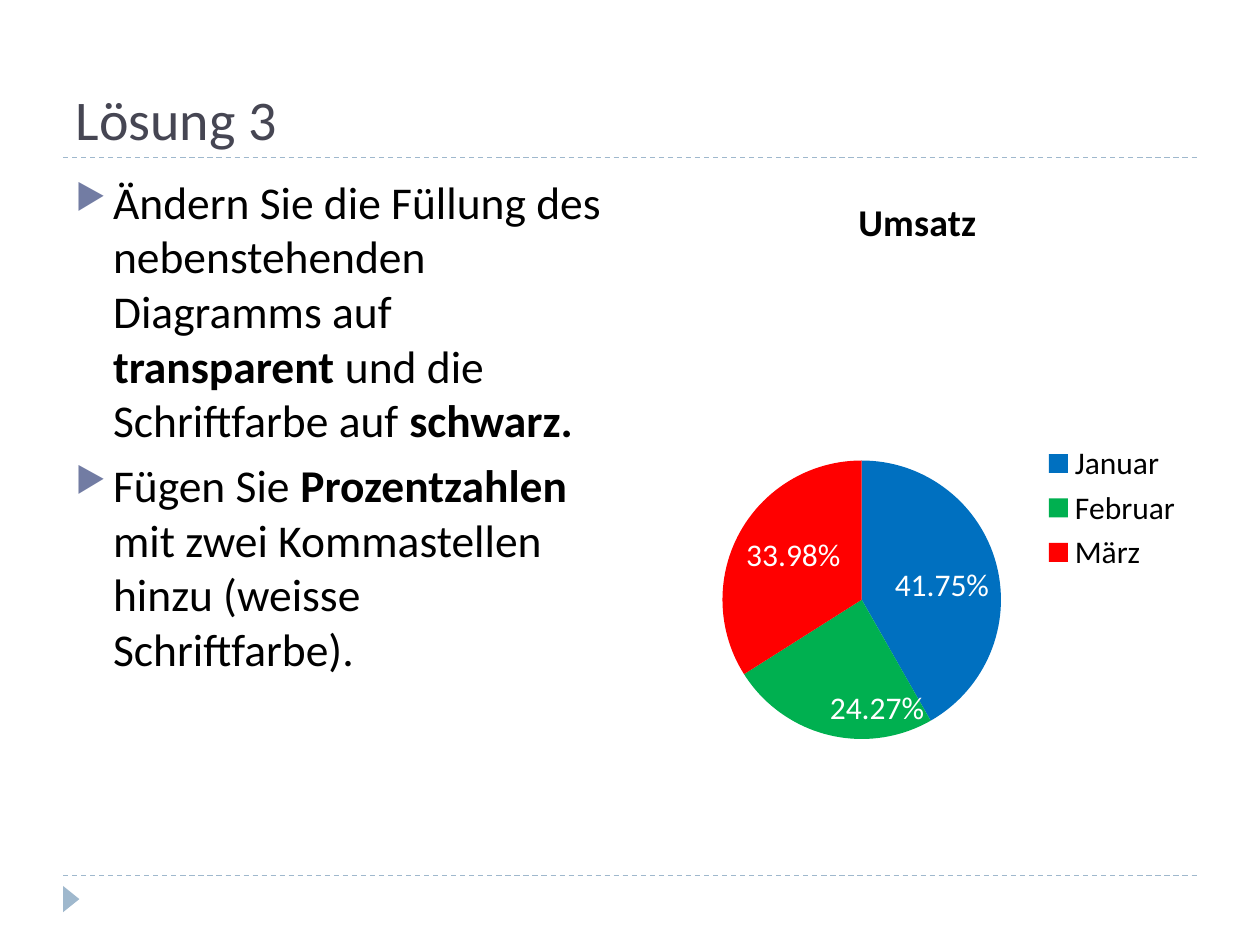
"""Build the "Lösung 3" slide with a task list and a pie chart of monthly sales."""
import pptx
import pptx.chart.data
import pptx.dml.color
import pptx.enum.chart
import pptx.enum.dml
import pptx.enum.shapes
import pptx.enum.text
import pptx.oxml
import pptx.oxml.ns
import pptx.util

Cm = pptx.util.Cm
Pt = pptx.util.Pt
RGBColor = pptx.dml.color.RGBColor

BLACK = RGBColor(0x00, 0x00, 0x00)
WHITE = RGBColor(0xFF, 0xFF, 0xFF)
SLATE = RGBColor(0x46, 0x46, 0x53)
PALE_BLUE = RGBColor(0x9F, 0xB8, 0xCD)
BULLET_COLOR = RGBColor(0x72, 0x7C, 0xA3)

TITLE = "Lösung 3"
TASKS = [
    [
        ("Ändern Sie die Füllung des nebenstehenden Diagramms auf ", False),
        ("transparent", True),
        (" und die Schriftfarbe auf ", False),
        ("schwarz.", True),
    ],
    [
        ("Fügen Sie ", False),
        ("Prozentzahlen", True),
        (" mit zwei Kommastellen hinzu (weisse Schriftfarbe).", False),
    ],
]
SERIES_NAME = "Umsatz"
SALES = [
    ("Januar", 41.75, RGBColor(0x00, 0x70, 0xC0)),
    ("Februar", 24.27, RGBColor(0x00, 0xB0, 0x50)),
    ("März", 33.98, RGBColor(0xFF, 0x00, 0x00)),
]

MARGIN = Cm(1.27)
CONTENT_WIDTH = Cm(22.86)
TITLE_AREA = (MARGIN, Cm(0.64), CONTENT_WIDTH, Cm(2.54))
COLUMN_TOP, COLUMN_WIDTH, COLUMN_HEIGHT = Cm(3.38), Cm(11.23), Cm(13.72)
TASK_LEFT, CHART_LEFT = MARGIN, Cm(12.88)
RULE_HEIGHTS = (Cm(17.65), Cm(3.18))
MARKER_AREA = (Cm(1.17), Cm(17.96), Cm(0.53), Cm(0.33))
INDENT = Cm(0.76)
PLOT_LAYOUT = {"x": 0.15, "y": 0.43, "w": 0.5, "h": 0.41}

TITLE_FONT = {"size": Pt(32), "color": SLATE, "bold": False}
TASK_FONT = {"size": Pt(26), "color": BLACK}
CHART_FONT = {"size": Pt(18), "color": BLACK}
CHART_TITLE_FONT = {"size": Pt(21.6), "color": BLACK, "bold": True}
LABEL_FONT = {"size": Pt(18), "color": WHITE}


def set_font(font, values):
    """Apply a dict of format values to a font."""
    for key, value in {"name": "Calibri", **values}.items():
        if key == "color":
            font.color.rgb = value
        else:
            setattr(font, key, value)


def add_child(parent, tag, **attributes):
    """Append an XML element with the given attributes."""
    child = pptx.oxml.xmlchemy.OxmlElement(tag)
    for key, value in attributes.items():
        child.set(key, str(value))
    parent.append(child)
    return child


def add_decoration(page):
    """Draw the dashed rules and the footer marker."""
    for height in RULE_HEIGHTS:
        rule = page.shapes.add_connector(
            pptx.enum.shapes.MSO_CONNECTOR.STRAIGHT,
            MARGIN, height, MARGIN + CONTENT_WIDTH, height)
        rule.line.color.rgb = PALE_BLUE
        rule.line.width = Pt(0.75)
        rule.line.dash_style = pptx.enum.dml.MSO_LINE.DASH
        add_child(rule._element.spPr, "a:effectLst")
    marker = page.shapes.add_shape(
        pptx.enum.shapes.MSO_SHAPE.ISOSCELES_TRIANGLE, *MARKER_AREA)
    marker.rotation = 90
    marker.shadow.inherit = False
    marker.fill.solid()
    marker.fill.fore_color.rgb = PALE_BLUE
    marker.line.fill.background()


def add_title(page):
    """Place and format the title placeholder."""
    title = page.shapes.title
    title.left, title.top, title.width, title.height = TITLE_AREA
    frame = title.text_frame
    frame.text = TITLE
    frame.vertical_anchor = pptx.enum.text.MSO_ANCHOR.BOTTOM
    para = frame.paragraphs[0]
    para.alignment = pptx.enum.text.PP_ALIGN.LEFT
    set_font(para.runs[0].font, TITLE_FONT)


def add_tasks(page):
    """Write the bulleted tasks in the left column."""
    box = page.shapes.add_textbox(TASK_LEFT, COLUMN_TOP, COLUMN_WIDTH, COLUMN_HEIGHT)
    frame = box.text_frame
    frame.word_wrap = True
    for index, task in enumerate(TASKS):
        para = frame.add_paragraph() if index else frame.paragraphs[0]
        para.space_before = Pt(6)
        properties = para._p.get_or_add_pPr()
        properties.set("marL", str(INDENT))
        properties.set("indent", str(-INDENT))
        color = add_child(properties, "a:buClr")
        add_child(color, "a:srgbClr", val=BULLET_COLOR)
        add_child(properties, "a:buSzPct", val=76000)
        add_child(properties, "a:buChar", char="▶")
        for text, bold in task:
            span = para.add_run()
            span.text = text
            set_font(span.font, {**TASK_FONT, "bold": bold})


def add_sales_chart(page):
    """Add the pie chart in the right column."""
    data = pptx.chart.data.CategoryChartData()
    data.categories = [month for month, _, _ in SALES]
    data.add_series(SERIES_NAME, [value for _, value, _ in SALES])
    chart = page.shapes.add_chart(
        pptx.enum.chart.XL_CHART_TYPE.PIE,
        CHART_LEFT, COLUMN_TOP, COLUMN_WIDTH, COLUMN_HEIGHT, data).chart
    set_font(chart.font, CHART_FONT)

    chart.has_title = True
    heading = chart.chart_title.text_frame
    heading.text = SERIES_NAME
    set_font(heading.paragraphs[0].runs[0].font, CHART_TITLE_FONT)

    chart.has_legend = True
    chart.legend.position = pptx.enum.chart.XL_LEGEND_POSITION.RIGHT
    chart.legend.include_in_layout = False
    set_font(chart.legend.font, CHART_FONT)

    plot = chart.plots[0]
    plot.vary_by_categories = True
    for index, (_, _, color) in enumerate(SALES):
        fill = plot.series[0].points[index].format.fill
        fill.solid()
        fill.fore_color.rgb = color

    plot.has_data_labels = True
    labels = plot.data_labels
    label_format = {
        "show_percentage": True,
        "show_value": False,
        "number_format": "0.00%",
        "number_format_is_linked": False,
        "position": pptx.enum.chart.XL_LABEL_POSITION.INSIDE_END,
    }
    for key, value in label_format.items():
        setattr(labels, key, value)
    set_font(labels.font, LABEL_FONT)

    area = chart._chartSpace.chart.plotArea
    for old in area.findall(pptx.oxml.ns.qn("c:layout")):
        area.remove(old)
    layout = add_child(area, "c:layout")
    area.insert(0, layout)
    manual = add_child(layout, "c:manualLayout")
    add_child(manual, "c:layoutTarget", val="inner")
    for key in ("x", "y"):
        add_child(manual, f"c:{key}Mode", val="edge")
    for key, value in PLOT_LAYOUT.items():
        add_child(manual, f"c:{key}", val=value)


def main():
    """Create and save the deck."""
    deck = pptx.Presentation()
    deck.slide_width, deck.slide_height = Cm(25.4), Cm(19.05)
    page = deck.slides.add_slide(deck.slide_layouts[5])
    add_decoration(page)
    add_title(page)
    add_tasks(page)
    add_sales_chart(page)
    deck.save("out.pptx")


if __name__ == "__main__":
    main()
